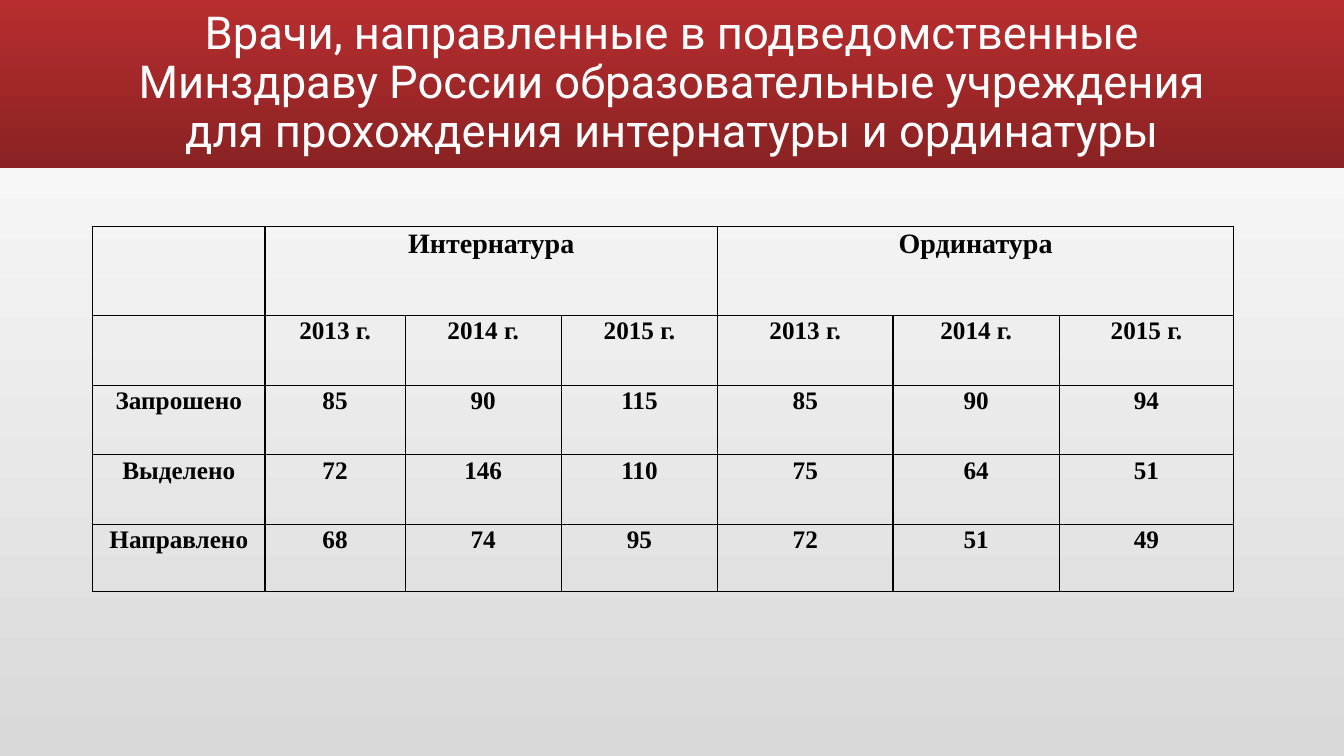
from lxml import etree
from pptx import Presentation
from pptx.dml.color import RGBColor
from pptx.enum.shapes import MSO_SHAPE
from pptx.enum.text import MSO_ANCHOR, PP_ALIGN
from pptx.oxml.ns import qn
from pptx.util import Pt

RECT = MSO_SHAPE.RECTANGLE
CENTER = PP_ALIGN.CENTER
MIDDLE = MSO_ANCHOR.MIDDLE

WHITE = RGBColor(0xFF, 0xFF, 0xFF)
BLACK = RGBColor(0x00, 0x00, 0x00)
GREY = RGBColor(0xD9, 0xD9, 0xD9)
RED = RGBColor(0xB8, 0x2D, 0x2F)
DARK_RED = RGBColor(0x8A, 0x22, 0x23)


def write(tf, text, size=18, font="Times New Roman", color=BLACK, bold=True, spacing=1.07):
    p = tf.paragraphs[0]
    p.alignment = CENTER
    p.line_spacing = spacing
    r = p.add_run()
    r.text = text
    r.font.size = Pt(size)
    r.font.name = font
    r.font.bold = bold
    r.font.color.rgb = color


def set_gradient(fill, start, end, angle):
    fill.gradient()
    fill.gradient_angle = angle
    for stop, color in zip(fill.gradient_stops, (start, end)):
        stop.color.rgb = color


prs = Presentation()
prs.slide_width, prs.slide_height = Pt(960), Pt(540)
s = prs.slides.add_slide(prs.slide_layouts[6])

# Background, grey at the bottom
set_gradient(s.background.fill, GREY, WHITE, 90)

# Red banner
banner = s.shapes.add_shape(RECT, 0, 0, prs.slide_width, Pt(120))
banner.shadow.inherit = False
banner.line.fill.background()
set_gradient(banner.fill, RED, DARK_RED, 270)

# Title
title = s.shapes.add_textbox(Pt(84), Pt(8), Pt(792), Pt(104.4))
tf = title.text_frame
tf.word_wrap = True
tf.vertical_anchor = MIDDLE
write(tf, "Врачи, направленные в подведомственные Минздраву России "
      "образовательные учреждения для прохождения интернатуры и ординатуры",
      size=32.4, font="Roboto", color=WHITE, bold=False, spacing=0.9)

# Table
YEARS = ["2013 г.", "2014 г.", "2015 г."]
ROWS = [
    ["", "Интернатура", "", "", "Ординатура", "", ""],
    ["", *YEARS, *YEARS],
    ["Запрошено", "85", "90", "115", "85", "90", "94"],
    ["Выделено", "72", "146", "110", "75", "64", "51"],
    ["Направлено", "68", "74", "95", "72", "51", "49"],
]
COL_WIDTHS = [123.1, 100.1, 111.6, 111.6, 125.3, 118.8, 124.6]
ROW_HEIGHTS = [63.4, 49.7, 49.7, 49.7, 48.2]

frame = s.shapes.add_table(len(ROWS), len(COL_WIDTHS), Pt(66.2), Pt(162),
                           Pt(sum(COL_WIDTHS)), Pt(sum(ROW_HEIGHTS)))
table = frame.table
table.first_row = table.horz_banding = False
for col, width in zip(table.columns, COL_WIDTHS):
    col.width = Pt(width)
for row, height in zip(table.rows, ROW_HEIGHTS):
    row.height = Pt(height)
for first in (1, 4):
    table.cell(0, first).merge(table.cell(0, first + 2))

for i, texts in enumerate(ROWS):
    for j, text in enumerate(texts):
        cell = table.cell(i, j)
        cell.margin_left = cell.margin_right = Pt(5)
        cell.margin_top = cell.margin_bottom = 0
        if text:
            write(cell.text_frame, text, size=20 if i == 0 else 18)
        # Thin black borders, no fill
        tcPr = cell._tc.get_or_add_tcPr()
        for side in ("a:lnL", "a:lnR", "a:lnT", "a:lnB"):
            ln = etree.SubElement(tcPr, qn(side), w=str(Pt(1)))
            solid = etree.SubElement(ln, qn("a:solidFill"))
            etree.SubElement(solid, qn("a:srgbClr"), val=str(BLACK))
        cell.fill.background()

prs.save("out.pptx")
